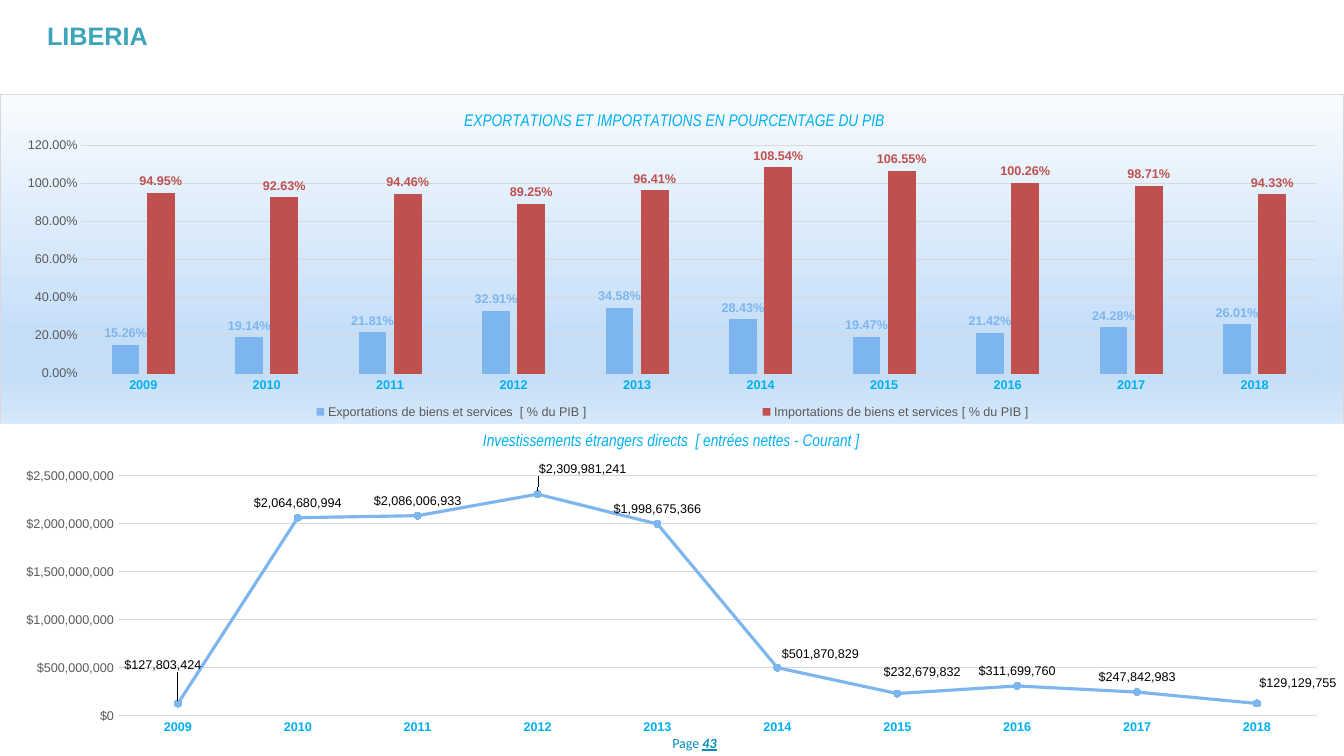
from lxml.etree import fromstring
from pptx import Presentation
from pptx.chart.data import CategoryChartData
from pptx.dml.color import RGBColor
from pptx.enum.chart import XL_CHART_TYPE, XL_LABEL_POSITION, XL_LEGEND_POSITION, XL_MARKER_STYLE, XL_TICK_MARK
from pptx.enum.text import MSO_ANCHOR, MSO_AUTO_SIZE, PP_ALIGN
from pptx.oxml.ns import qn
from pptx.util import Pt

SCALE = 12192000 / 1344
NAMESPACES = ('xmlns:c="http://schemas.openxmlformats.org/drawingml/2006/chart" '
              'xmlns:a="http://schemas.openxmlformats.org/drawingml/2006/main"')
COLORS = {"title": "3EA4BA", "accent": "00B0F0", "page": "008CBA", "export": "7DB6EF", "import": "C0504D",
          "text": "595959", "grid": "D9D9D9", "black": "000000", "white": "FFFFFF"}
GRADIENT = [(0, "F8FBFE"), (74, "C4DEF8"), (83, "C4DEF8"), (100, "D8E9FA")]
YEARS = [str(year) for year in range(2009, 2019)]
EXPORTS = [0.1526, 0.1914, 0.2181, 0.3291, 0.3458, 0.2843, 0.1947, 0.2142, 0.2428, 0.2601]
IMPORTS = [0.9495, 0.9263, 0.9446, 0.8925, 0.9641, 1.0854, 1.0655, 1.0026, 0.9871, 0.9433]
INVESTMENTS = [127803424, 2064680994, 2086006933, 2309981241, 1998675366,
               501870829, 232679832, 311699760, 247842983, 129129755]
LABEL_SHIFTS = {0: (-15, -24), 3: (45, -10), 5: (43, 1), 6: (25, -6), 9: (41, -5)}


def px(value):
    return round(value * SCALE)


def xml(markup):
    tag, rest = markup.split(">", 1)
    return fromstring(f"{tag} {NAMESPACES}>{rest}")


def solid(color):
    return f'<a:solidFill><a:srgbClr val="{color}"/></a:solidFill>'


class SlideBuilder:
    """Holds the style and current slide and adds each kind of element."""

    def __init__(self, presentation):
        self.slide = presentation.slides.add_slide(presentation.slide_layouts[5])

    def format(self, target, **values):
        for name, value in values.items():
            setattr(target, name, value)

    def font(self, font, size, color, name="Arial", **values):
        self.format(font, size=Pt(size), name=name, **values)
        font.color.rgb = RGBColor.from_string(COLORS[color])

    def line(self, line, color, width):
        line.color.rgb = RGBColor.from_string(COLORS[color])
        line.width = Pt(width)

    def fill(self, fill, color):
        fill.solid()
        fill.fore_color.rgb = RGBColor.from_string(COLORS[color])

    def place(self, shape, left, top, width, height):
        self.format(shape, left=px(left), top=px(top), width=px(width), height=px(height))

    def title(self, text, box):
        shape = self.slide.shapes.title
        self.place(shape, *box)
        frame = shape.text_frame
        frame.text = text
        self.format(frame, word_wrap=False, auto_size=MSO_AUTO_SIZE.SHAPE_TO_FIT_TEXT,
                    vertical_anchor=MSO_ANCHOR.TOP)
        paragraph = frame.paragraphs[0]
        paragraph.alignment = PP_ALIGN.LEFT
        self.font(paragraph.runs[0].font, 18, "title", bold=True)

    def page_number(self, number, box):
        frame = self.slide.shapes.add_textbox(*map(px, box)).text_frame
        self.format(frame, word_wrap=True, vertical_anchor=MSO_ANCHOR.MIDDLE)
        paragraph = frame.paragraphs[0]
        paragraph.alignment = PP_ALIGN.CENTER
        for text, emphasis in (("Page ", False), (number, True)):
            run = paragraph.add_run()
            run.text = text
            self.font(run.font, 10, "page", "Calibri", bold=emphasis, italic=emphasis, underline=emphasis)

    def layout(self, parent, index, size, values, inner=False):
        for old in parent.findall(qn("c:layout")):
            parent.remove(old)
        keys = ("x", "y", "w", "h")[:len(values)]
        markup = '<c:layoutTarget val="inner"/>' if inner else ""
        if inner or len(values) == 4:
            markup += '<c:xMode val="edge"/><c:yMode val="edge"/>'
        elif index == 1 and parent.tag == qn("c:title"):
            markup += '<c:xMode val="edge"/><c:yMode val="edge"/>'
        for key, value, length in zip(keys, values, size * 2):
            markup += f'<c:{key} val="{value / length:.4f}"/>'
        parent.insert(index, xml(f"<c:layout><c:manualLayout>{markup}</c:manualLayout></c:layout>"))

    def chart(self, kind, box, title, title_at, plot_box, series, number_format, maximum, step, background):
        data = CategoryChartData(number_format=number_format)
        data.categories = YEARS
        for name, values, _ in series:
            data.add_series(name, values)
        chart = self.slide.shapes.add_chart(kind, *map(px, box), data).chart
        size = box[2:]
        self.font(chart.font, 10, "black")
        self.format(chart, has_title=True, has_legend=False)
        chart.chart_title.text_frame.text = title
        run = chart.chart_title.text_frame.paragraphs[0].runs[0]
        self.font(run.font, 12, "accent", "Arial Narrow", bold=False, italic=True)
        self.layout(chart.chart_title._element, 1, size, title_at)
        space = chart._chartSpace
        space.chart.addnext(xml(f"<c:spPr>{background}</c:spPr>"))
        space.find(qn("c:date1904")).addnext(xml('<c:roundedCorners val="0"></c:roundedCorners>'))
        self.layout(space.chart.plotArea, 0, size, plot_box, inner=True)
        for axis in (chart.category_axis, chart.value_axis):
            self.format(axis, major_tick_mark=XL_TICK_MARK.NONE, minor_tick_mark=XL_TICK_MARK.NONE)
        self.font(chart.category_axis.tick_labels.font, 9, "accent", bold=True)
        self.line(chart.category_axis.format.line, "grid", 0.75)
        axis = chart.value_axis
        self.format(axis, minimum_scale=0, maximum_scale=maximum, major_unit=step, has_major_gridlines=True)
        self.line(axis.major_gridlines.format.line, "grid", 0.75)
        axis.format.line.fill.background()
        self.format(axis.tick_labels, number_format=number_format, number_format_is_linked=False)
        self.font(axis.tick_labels.font, 9, "text")
        chart.plots[0].vary_by_categories = False
        return chart

    def labels(self, series, number_format, position, color, bold):
        labels = series.data_labels
        self.format(labels, show_value=True, number_format=number_format,
                    number_format_is_linked=False, position=position)
        self.font(labels.font, 9, color, bold=bold)

    def columns(self, legend_box, **values):
        chart = self.chart(XL_CHART_TYPE.COLUMN_CLUSTERED, **values)
        self.format(chart.plots[0], gap_width=219, overlap=-27)
        for series, (_, _, color) in zip(chart.plots[0].series, values["series"]):
            self.fill(series.format.fill, color)
            self.labels(series, values["number_format"], XL_LABEL_POSITION.OUTSIDE_END, color, True)
        chart.has_legend = True
        self.format(chart.legend, position=XL_LEGEND_POSITION.BOTTOM, include_in_layout=False)
        self.font(chart.legend.font, 9, "text")
        self.layout(chart.legend._element, 1, values["box"][2:], legend_box)

    def trend(self, shifts, **values):
        chart = self.chart(XL_CHART_TYPE.LINE_MARKERS, **values)
        series = chart.plots[0].series[0]
        color = values["series"][0][2]
        series.smooth = False
        self.line(series.format.line, color, 2.25)
        self.format(series.marker, style=XL_MARKER_STYLE.CIRCLE, size=5)
        self.fill(series.marker.format.fill, color)
        self.line(series.marker.format.line, color, 0.75)
        self.labels(series, values["number_format"], XL_LABEL_POSITION.ABOVE, "black", False)
        for index in shifts:
            label = series.points[index].data_label
            self.font(label.font, 9, "black", bold=False)
            label.position = XL_LABEL_POSITION.ABOVE
        for element, shift in zip(series._element.findall(".//" + qn("c:dLbl")), shifts.values()):
            self.layout(element, 1, values["box"][2:], shift)


def main():
    presentation = Presentation()
    presentation.slide_width, presentation.slide_height = px(1344), px(756)
    builder = SlideBuilder(presentation)
    builder.title("LIBERIA", (37, 15, 126, 40))
    stops = "".join(f'<a:gs pos="{position * 1000}"><a:srgbClr val="{color}"/></a:gs>'
                    for position, color in GRADIENT)
    builder.columns(
        legend_box=(144, 308, 1057, 21), box=(0, 94, 1344, 336),
        title="EXPORTATIONS ET IMPORTATIONS EN POURCENTAGE DU PIB", title_at=(461, 14),
        plot_box=(81, 51, 1236, 229), number_format="0.00%", maximum=1.2, step=0.2,
        series=[("Exportations de biens et services  [ % du PIB ]", EXPORTS, "export"),
                ("Importations de biens et services [ % du PIB ]", IMPORTS, "import")],
        background=f'<a:gradFill><a:gsLst>{stops}</a:gsLst><a:lin ang="5400000" scaled="0"/></a:gradFill>'
                   f'<a:ln w="9525">{solid(COLORS["grid"])}</a:ln>')
    builder.trend(
        shifts=LABEL_SHIFTS, box=(0, 424, 1344, 318),
        title="Investissements étrangers directs  [ entrées nettes - Courant ]", title_at=(480, 5),
        plot_box=(118, 52, 1199, 240), number_format='"$"#,##0;\\-"$"#,##0', maximum=2500000000, step=500000000,
        series=[("Series 1", INVESTMENTS, "export")],
        background=f'{solid(COLORS["white"])}<a:ln><a:noFill/></a:ln>')
    builder.page_number("43", (645, 730, 99, 26))
    presentation.save("out.pptx")


if __name__ == "__main__":
    main()
